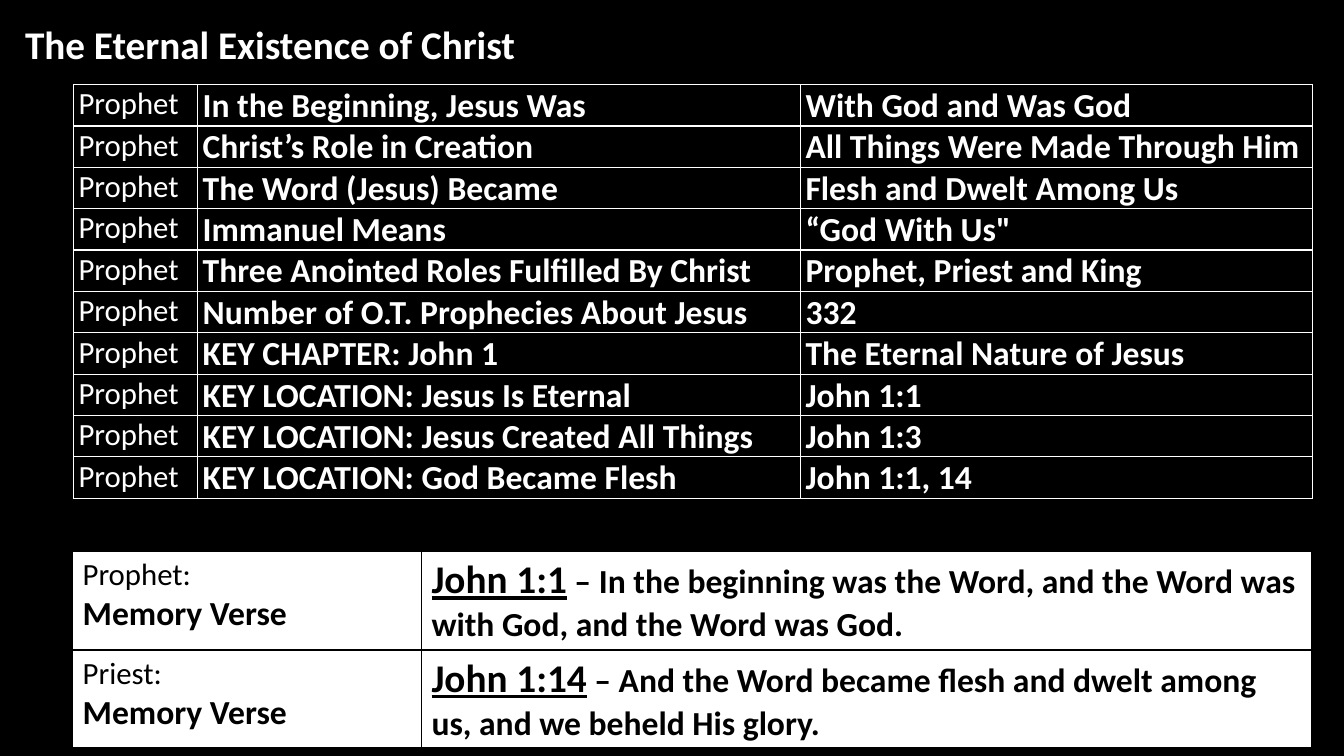
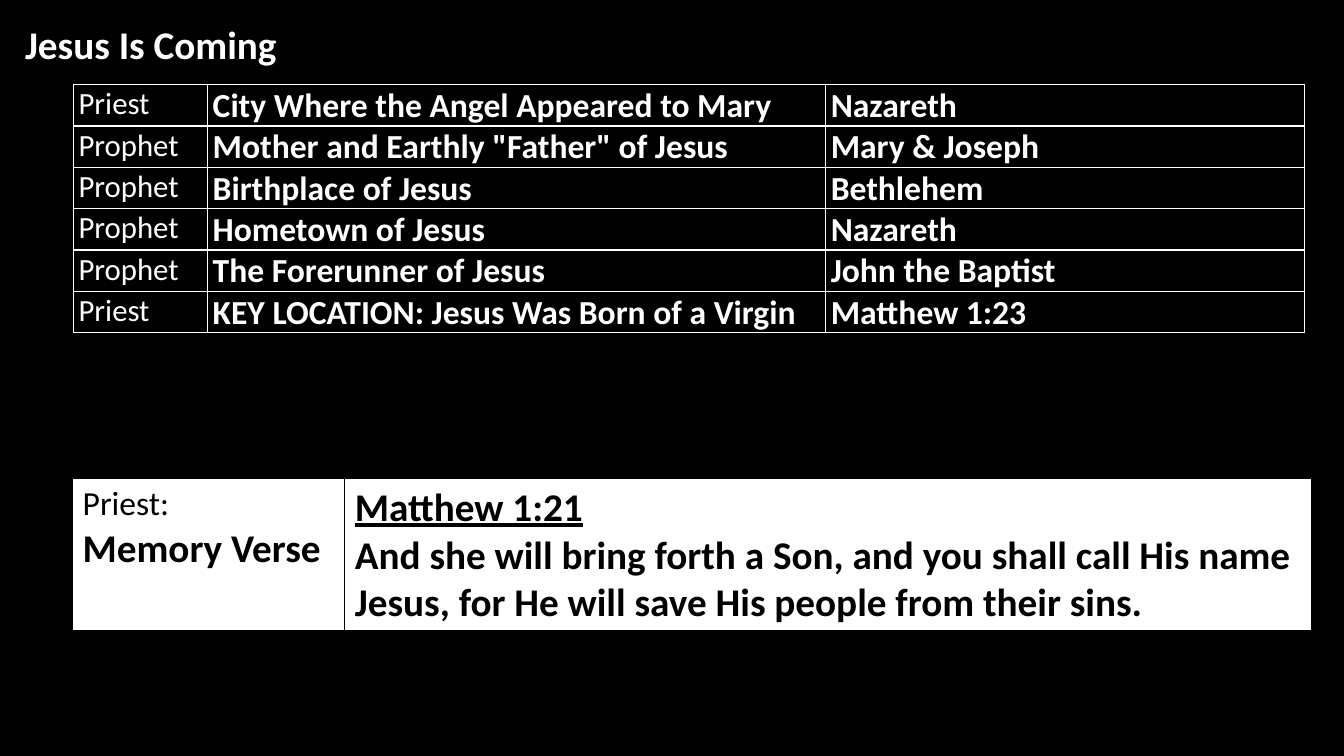
from lxml.etree import SubElement
from pptx import Presentation
from pptx.dml.color import RGBColor
from pptx.oxml.ns import qn
from pptx.util import Inches, Pt

BLACK = RGBColor(0x00, 0x00, 0x00)
WHITE = RGBColor(0xFF, 0xFF, 0xFF)
FONT = "Calibri"
TOPIC_MARGINS = {"margin_left": 0.05, "margin_top": 0.01, "margin_right": 0.01, "margin_bottom": 0}
VERSE_MARGINS = {"margin_left": 0.1, "margin_top": 0.05, "margin_right": 0.1, "margin_bottom": 0.05}

LESSONS = [
    {
        "title": "The Eternal Existence of Christ",
        "topic_widths": [1.23, 5.98, 5.08],
        "topics": [
            ("Prophet", "In the Beginning, Jesus Was", "With God and Was God"),
            ("Prophet", "Christ’s Role in Creation", "All Things Were Made Through Him"),
            ("Prophet", "The Word (Jesus) Became", "Flesh and Dwelt Among Us"),
            ("Prophet", "Immanuel Means", "“God With Us\""),
            ("Prophet", "Three Anointed Roles Fulfilled By Christ", "Prophet, Priest and King"),
            ("Prophet", "Number of O.T. Prophecies About Jesus", "332"),
            ("Prophet", "KEY CHAPTER: John 1", "The Eternal Nature of Jesus"),
            ("Prophet", "KEY LOCATION: Jesus Is Eternal", "John 1:1"),
            ("Prophet", "KEY LOCATION: Jesus Created All Things", "John 1:3"),
            ("Prophet", "KEY LOCATION: God Became Flesh", "John 1:1, 14"),
        ],
        "verse_widths": [3.46, 8.83],
        "verse_height": 0.97,
        "verse_sizes": (22, 24),
        "verses": [
            (6.45, "Priest:", [[
                ("John 1:14", 28, True, True),
                (" – And the Word became flesh and dwelt among us, and we beheld His glory.", 24, True, False),
            ]]),
            (5.47, "Prophet:", [[
                ("John 1:1", 28, True, True),
                (" – In the beginning was the Word, and the Word was with God, and the Word was God.", 24, True, False),
            ]]),
        ],
    },
    {
        "title": "Jesus Is Coming",
        "topic_widths": [1.33, 6.13, 4.75],
        "topics": [
            ("Priest", "City Where the Angel Appeared to Mary", "Nazareth"),
            ("Prophet", "Mother and Earthly \"Father\" of Jesus", "Mary & Joseph"),
            ("Prophet", "Birthplace of Jesus", "Bethlehem"),
            ("Prophet", "Hometown of Jesus", "Nazareth"),
            ("Prophet", "The Forerunner of Jesus", "John the Baptist"),
            ("Priest", "KEY LOCATION: Jesus Was Born of a Virgin", "Matthew 1:23"),
        ],
        "verse_widths": [2.7, 9.59],
        "verse_height": 1.5,
        "verse_sizes": (24, 28),
        "verses": [
            (4.75, "Priest:", [
                [("Matthew 1:21", 28, True, True)],
                [("And she will bring forth a Son, and you shall call His name Jesus, "
                  "for He will save His people from their sins.", 28, True, False)],
            ]),
        ],
    },
]


def write_paragraphs(frame, paragraphs, ink):
    for index, runs in enumerate(paragraphs):
        paragraph = frame.add_paragraph() if index else frame.paragraphs[0]
        for text, size, bold, underline in runs:
            run = paragraph.add_run()
            run.text = text
            formats = {"name": FONT, "size": Pt(size), "bold": bold, "underline": underline}
            for key, value in formats.items():
                setattr(run.font, key, value)
            run.font.color.rgb = ink


def add_grid(slide, left, top, widths, row_height, rows, ink, fill, margins):
    grid = slide.shapes.add_table(
        len(rows), len(widths), Inches(left), Inches(top),
        Inches(sum(widths)), Inches(row_height * len(rows)),
    ).table
    grid.first_row = False
    grid.horz_banding = False
    for column, width in zip(grid.columns, widths):
        column.width = Inches(width)
    for row, contents in zip(grid.rows, rows):
        row.height = Inches(row_height)
        for cell, paragraphs in zip(row.cells, contents):
            for side, margin in margins.items():
                setattr(cell, side, Inches(margin))
            properties = cell._tc.get_or_add_tcPr()
            for edge in ("a:lnL", "a:lnR", "a:lnT", "a:lnB"):
                border = SubElement(properties, qn(edge), w=str(Pt(1)))
                border_fill = SubElement(border, qn("a:solidFill"))
                SubElement(border_fill, qn("a:srgbClr"), val=str(ink))
            if fill is None:
                cell.fill.background()
            else:
                cell.fill.solid()
                cell.fill.fore_color.rgb = fill
            write_paragraphs(cell.text_frame, paragraphs, ink)


prs = Presentation()
prs.slide_width = Inches(13.33)
prs.slide_height = Inches(7.5)
backdrop = prs.slide_master.background.fill
backdrop.solid()
backdrop.fore_color.rgb = BLACK

for lesson in LESSONS:
    slide = prs.slides.add_slide(prs.slide_layouts[6])
    title = slide.shapes.add_textbox(Inches(0.15), Inches(0.15), Inches(11.66), Inches(0.57))
    title.text_frame.word_wrap = True
    write_paragraphs(title.text_frame, [[(lesson["title"], 28, True, False)]], WHITE)

    topic_rows = [
        [
            [[(role, 22, False, False)]],
            [[(topic, 24, True, False)]],
            [[(answer, 24, True, False)]],
        ]
        for role, topic, answer in lesson["topics"]
    ]
    add_grid(slide, 0.73, 0.84, lesson["topic_widths"], 0.41, topic_rows, WHITE, None, TOPIC_MARGINS)

    role_size, label_size = lesson["verse_sizes"]
    for top, role, verse in lesson["verses"]:
        label = [[(role, role_size, False, False)], [("Memory Verse", label_size, True, False)]]
        add_grid(slide, 0.72, top, lesson["verse_widths"], lesson["verse_height"],
                 [[label, verse]], BLACK, WHITE, VERSE_MARGINS)

prs.save("out.pptx")
